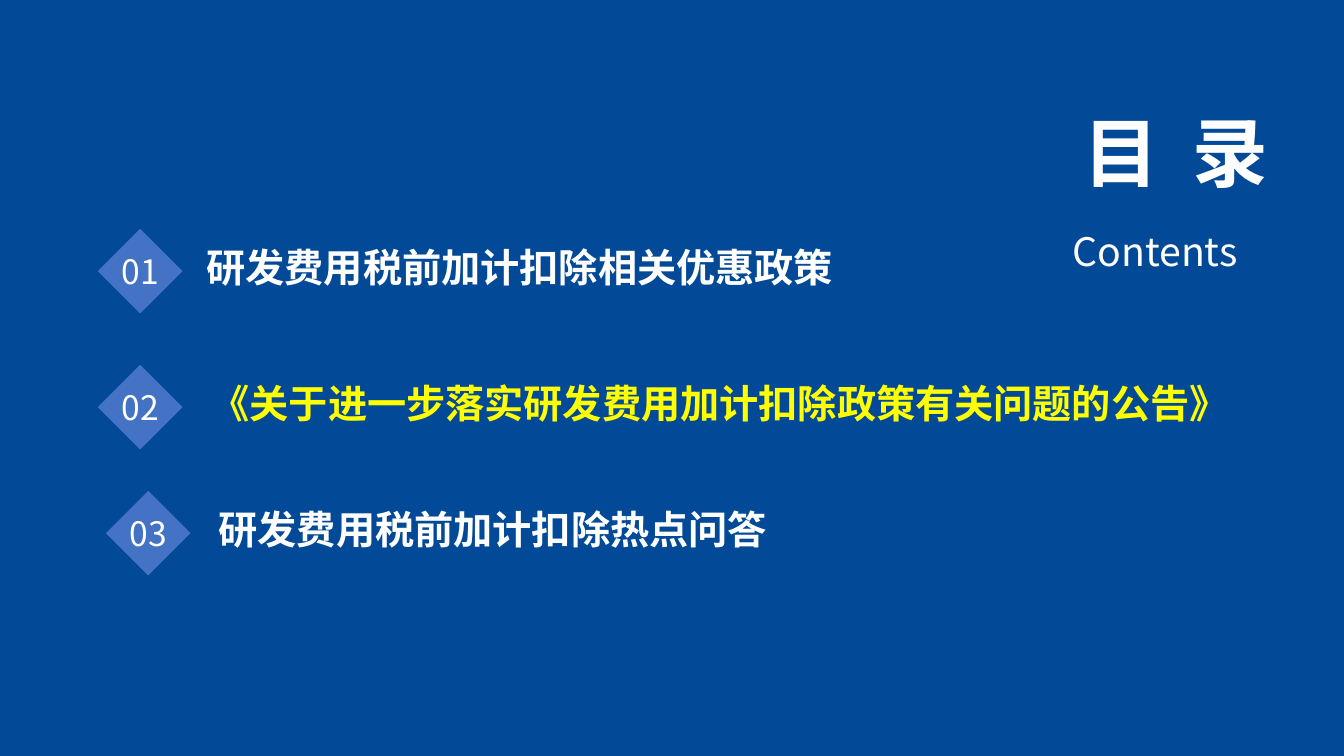
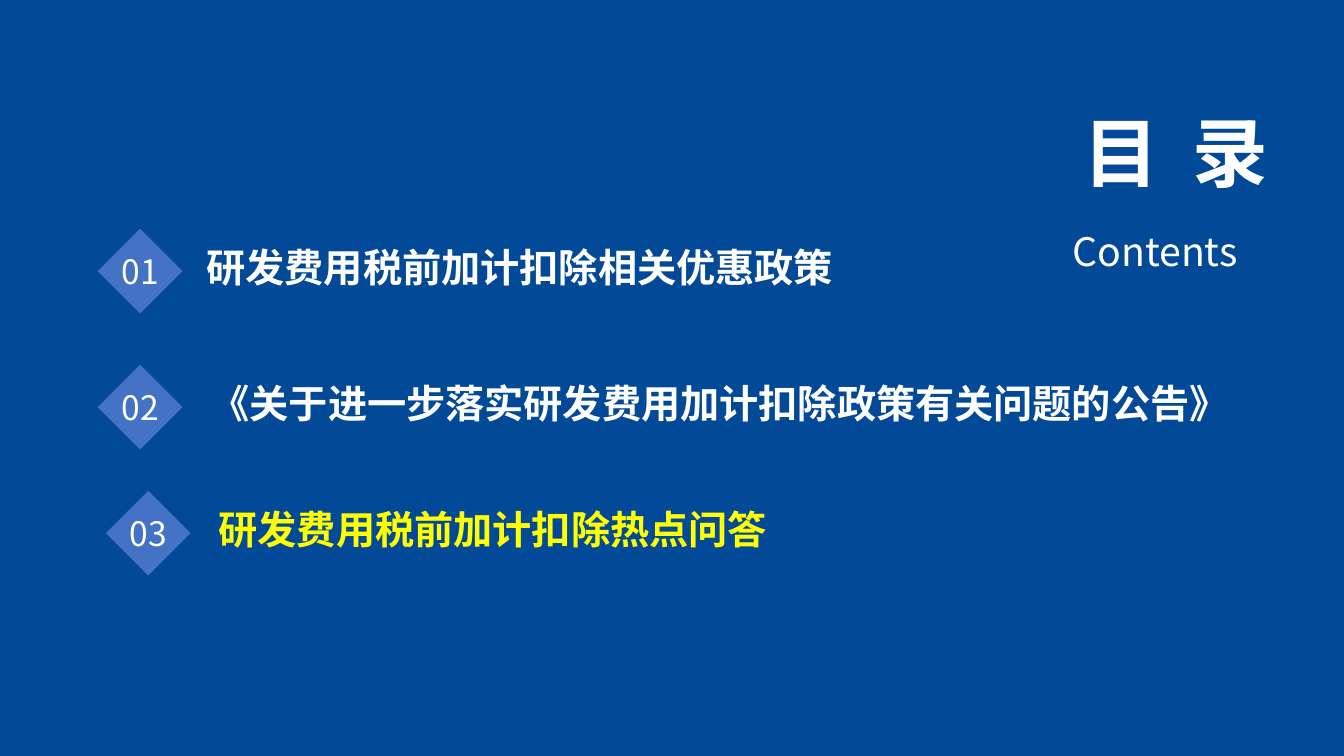
from dataclasses import dataclass

from lxml import etree
from pptx import Presentation
from pptx.dml.color import RGBColor
from pptx.enum.shapes import MSO_SHAPE
from pptx.enum.text import MSO_ANCHOR, MSO_AUTO_SIZE, PP_ALIGN
from pptx.oxml.ns import qn
from pptx.util import Inches, Pt

DIAMOND = MSO_SHAPE.DIAMOND
TOP, MIDDLE = MSO_ANCHOR.TOP, MSO_ANCHOR.MIDDLE
GROW, FIXED = MSO_AUTO_SIZE.SHAPE_TO_FIT_TEXT, MSO_AUTO_SIZE.NONE
LEFT, CENTER, RIGHT, JUSTIFY = PP_ALIGN.LEFT, PP_ALIGN.CENTER, PP_ALIGN.RIGHT, PP_ALIGN.JUSTIFY


@dataclass(frozen=True)
class Theme:
    """Colours, font and type sizes shared by the slides."""

    background: RGBColor = RGBColor(0x02, 0x49, 0x97)
    marker: RGBColor = RGBColor(0x44, 0x72, 0xC4)
    text: RGBColor = RGBColor(0xFF, 0xFF, 0xFF)
    highlight: RGBColor = RGBColor(0xFF, 0xFF, 0x00)
    font: str = "Noto Sans CJK SC"
    title_size: int = 54
    item_size: int = 28
    number_size: int = 24
    title_tracking: int = 6


THEME = Theme()
MARKER_SIZE = 0.84
MARKER_TO_TEXT_TOP = 0.09
AGENDA = [
    ("研发费用税前加计扣除相关优惠政策", 0.97, 2.27, 1.95, 7.18),
    ("《关于进一步落实研发费用加计扣除政策有关问题的公告》", 0.97, 3.62, 1.99, 11.08),
    ("研发费用税前加计扣除热点问答", 1.05, 4.87, 2.07, 11.08),
]


def apply(target, values):
    """Set each named attribute on the target."""
    for name, value in values.items():
        setattr(target, name, value)


def write(box, text, size, color=THEME.text, bold=False, tracking=0, frame=None, layout=None):
    """Fill a box with one formatted line of text."""
    apply(box.text_frame, {"word_wrap": True, "auto_size": GROW,
                           "vertical_anchor": TOP, **(frame or {})})
    para = box.text_frame.paragraphs[0]
    apply(para, {"alignment": LEFT, "line_spacing": 1.0, **(layout or {})})
    span = para.add_run()
    span.text = text
    apply(span.font, {"size": Pt(size), "bold": bold, "name": THEME.font})
    span.font.color.rgb = color
    properties = span.font._element
    etree.SubElement(properties, qn("a:ea"), typeface=THEME.font)
    if tracking:
        properties.set("spc", str(tracking * 100))


def add_text(page, place, text, **style):
    """Add a text box at left, top, width, height."""
    write(page.shapes.add_textbox(*map(Inches, place)), text, **style)


def add_heading(page):
    """Place the title and its subtitle."""
    title = page.shapes.title
    places = map(Inches, (9.97, 1, 2.71, 1.12))
    apply(title, dict(zip(("left", "top", "width", "height"), places)))
    write(title, "目 录", THEME.title_size, bold=True,
          tracking=THEME.title_tracking, layout={"alignment": RIGHT})
    add_text(page, (10.54, 1.97, 1.99, 0.72), "Contents", size=THEME.item_size,
             layout={"alignment": JUSTIFY, "line_spacing": 1.5})


def add_marker(page, left, top, number):
    """Add a numbered diamond."""
    marker = page.shapes.add_shape(DIAMOND, *map(Inches, (left, top, MARKER_SIZE, MARKER_SIZE)))
    marker.shadow.inherit = False
    marker.fill.solid()
    marker.fill.fore_color.rgb = THEME.marker
    marker.line.fill.background()
    margins = {f"margin_{side}": 0 for side in ("left", "top", "right", "bottom")}
    write(marker, f"{number:02d}", THEME.number_size, layout={"alignment": CENTER},
          frame={"word_wrap": False, "auto_size": FIXED, "vertical_anchor": MIDDLE, **margins})


def add_agenda(deck, current):
    """Add a contents slide with the current item highlighted."""
    page = deck.slides.add_slide(deck.slide_layouts.get_by_name("Title Only"))
    add_heading(page)
    for number, (text, marker_left, top, text_left, width) in enumerate(AGENDA, 1):
        add_marker(page, marker_left, top, number)
        add_text(page, (text_left, top + MARKER_TO_TEXT_TOP, width, 0.57), text,
                 size=THEME.item_size, bold=True,
                 color=THEME.highlight if number == current else THEME.text)


def main():
    """Build and save the deck."""
    deck = Presentation()
    apply(deck, {"slide_width": Inches(13.33), "slide_height": Inches(7.5)})
    fill = deck.slide_master.background.fill
    fill.solid()
    fill.fore_color.rgb = THEME.background
    for current in (2, 3):
        add_agenda(deck, current)
    deck.save("out.pptx")


if __name__ == "__main__":
    main()
